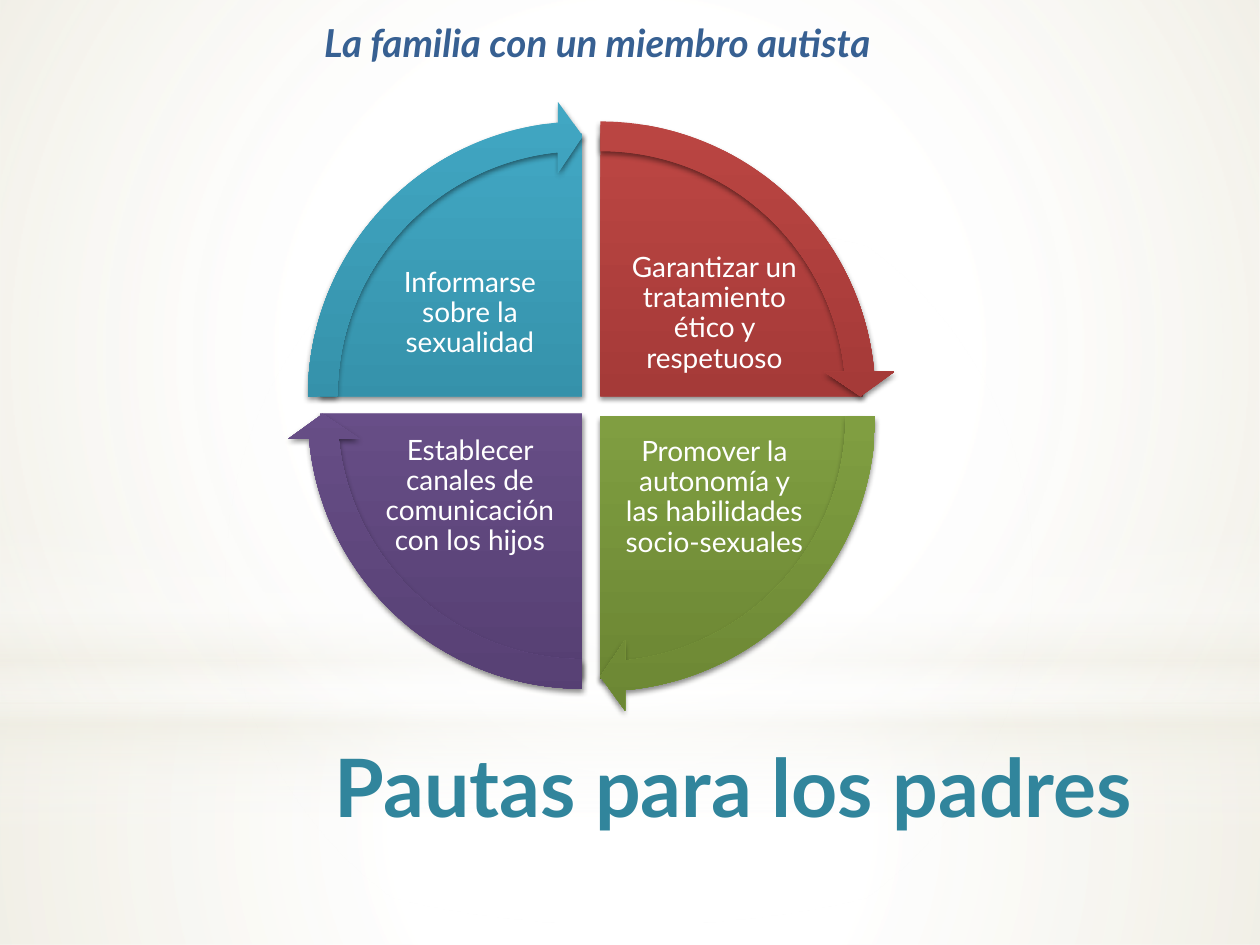
from typing import NamedTuple

from lxml.etree import SubElement
from pptx import Presentation
from pptx.dml.color import RGBColor
from pptx.enum.shapes import MSO_SHAPE
from pptx.enum.text import MSO_ANCHOR, PP_ALIGN
from pptx.oxml.ns import qn
from pptx.util import Inches, Pt

FONT = "Lato"
TURN = 216  # full circle in adjustment units
QUARTER = TURN / 4
TIP = 3.28  # arrowhead angle
PIE, ARROW = 4.17, 4.69
INSET = (ARROW - PIE) / 2


class Stop(NamedTuple):
    pos: int
    color: str
    alpha: int = 100


class Glow(NamedTuple):
    kind: MSO_SHAPE
    box: tuple[float, float, float, float]
    stops: list[Stop]
    round: bool = True


class Part(NamedTuple):
    text: str
    left: float
    top: float
    label: tuple[float, float]
    start: float
    light: str
    dark: str


GLOWS = [
    Glow(MSO_SHAPE.RECTANGLE, (0, 5.58, 10, 1.92),
         [Stop(0, "FFFFFF", 91), Stop(37, "FFFFFF", 76), Stop(100, "EEECE1", 79)]),
    Glow(MSO_SHAPE.RECTANGLE, (0, 0, 10, 5.58),
         [Stop(0, "FFFFFF", 89), Stop(48, "FFFFFF", 62), Stop(100, "EEECE1", 79)]),
    Glow(MSO_SHAPE.RECTANGLE, (0, 4.12, 10, 2.5),
         [Stop(0, "FFFFFF", 0), Stop(29, "FFFFFF", 30), Stop(45, "EEECE1", 40),
          Stop(55, "FFFFFF", 26), Stop(65, "EEECE1", 60), Stop(100, "FFFFFF", 0)],
         round=False),
    Glow(MSO_SHAPE.OVAL, (0, 1.75, 10, 5.58),
         [Stop(0, "FFFFFF"), Stop(56, "FFFFFF", 0)]),
]

PARTS = [
    Part("Garantizar un tratamiento ético y respetuoso",
         2.68, 1.06, (4.9, 1.92), 3 * QUARTER, "BC4643", "8C2D2B"),
    Part("Promover la autonomía y las habilidades socio-sexuales",
         2.68, 1.22, (4.9, 3.38), 0, "95B74F", "6C8734"),
    Part("Establecer canales de comunicación con los hijos",
         2.54, 1.2, (2.96, 3.37), QUARTER, "795D9C", "563F73"),
    Part("Informarse sobre la sexualidad",
         2.54, 1.06, (2.96, 1.92), 2 * QUARTER, "41A7C3", "287B91"),
]


def node(parent, tag: str, **attrs):
    return SubElement(parent, qn(f"a:{tag}"), {k: str(v) for k, v in attrs.items()})


def tint(parent, color: str, alpha: int) -> None:
    """Add a colour with an opacity in percent."""
    clr = node(parent, "srgbClr", val=color)
    if alpha < 100:
        node(clr, "alpha", val=alpha * 1000)


def blend(shape, stops: list[Stop], round: bool = False) -> None:
    """Fill with a gradient, from the centre out or from top to bottom."""
    shape.fill.background()
    props = shape.element.spPr
    grad = node(props, "gradFill", rotWithShape=1)
    props.replace(props.find(qn("a:noFill")), grad)
    row = node(grad, "gsLst")
    for stop in stops:
        tint(node(row, "gs", pos=stop.pos * 1000), stop.color, stop.alpha)
    if round:
        way = node(grad, "path", path="circle")
        node(way, "fillToRect", l=50000, t=50000, r=50000, b=50000)
    else:
        node(grad, "lin", ang=5400000, scaled=0)


def draw(slide, kind: MSO_SHAPE, box, stops: list[Stop], round: bool = False):
    shape = slide.shapes.add_shape(kind, *map(Inches, box))
    shape.shadow.inherit = False
    shape.line.fill.background()
    blend(shape, stops, round)
    return shape


def bend(shape, values) -> None:
    """Set the adjustments and cast the shadow below."""
    for i, value in enumerate(values):
        shape.adjustments[i] = value
    effects = shape.element.spPr.find(qn("a:effectLst"))
    cast = node(effects, "outerShdw", blurRad=Pt(3.1), dist=Pt(1.8),
                dir=5400000, rotWithShape=0)
    tint(cast, "000000", 45)


def write(slide, text: str, box, size: int, color: str,
          align=PP_ALIGN.CENTER, bold: bool = False, italic: bool = False):
    frame = slide.shapes.add_textbox(*map(Inches, box)).text_frame
    frame.word_wrap = True
    frame.text = text
    para = frame.paragraphs[0]
    para.alignment = align
    font = para.runs[0].font
    font.name, font.size = FONT, Pt(size)
    font.bold, font.italic = bold, italic
    font.color.rgb = RGBColor.from_string(color)
    return frame


def draw_pie(slide, part: Part) -> None:
    pie = draw(slide, MSO_SHAPE.PIE, (part.left, part.top, PIE, PIE),
               [Stop(0, part.light), Stop(100, part.dark)])
    bend(pie, (part.start, (part.start + QUARTER) % TURN))
    frame = write(slide, part.text, (*part.label, 1.54, 1.14), 16, "FFFFFF")
    frame.vertical_anchor = MSO_ANCHOR.MIDDLE
    frame.margin_left = frame.margin_right = Inches(0.02)
    frame.margin_top = frame.margin_bottom = Inches(0.02)
    para = frame.paragraphs[0]
    para.line_spacing = 0.9
    para.space_after = Pt(5.6)


def draw_arrow(slide, part: Part) -> None:
    box = (part.left - INSET, part.top - INSET, ARROW, ARROW)
    arrow = draw(slide, MSO_SHAPE.CIRCULAR_ARROW, box,
                 [Stop(0, part.light), Stop(100, part.dark)])
    end = (part.start + QUARTER - TIP) % TURN
    bend(arrow, (0.05, TIP, end, part.start, 0.06))


def main() -> None:
    deck = Presentation()
    deck.slide_width, deck.slide_height = Inches(10), Inches(7.5)
    slide = deck.slides.add_slide(deck.slide_layouts[6])
    back = slide.background.fill
    back.solid()
    back.fore_color.rgb = RGBColor.from_string("FFFFFF")

    for glow in GLOWS:
        draw(slide, *glow)
    for part in PARTS:
        draw_pie(slide, part)
    for part in PARTS:
        draw_arrow(slide, part)

    write(slide, "Pautas para los padres", (1.96, 5.8, 7.12, 1.25), 46,
          "31859C", PP_ALIGN.RIGHT, bold=True)
    head = write(slide, "La familia con un miembro autista",
                 (1.28, 0.1, 6.87, 0.65), 22, "376092", bold=True, italic=True)
    para = head.paragraphs[0]
    para.space_before, para.space_after = Pt(4.4), Pt(3)
    para._p.get_or_add_pPr().set("marL", str(Inches(0.05)))
    deck.save("out.pptx")


if __name__ == "__main__":
    main()
